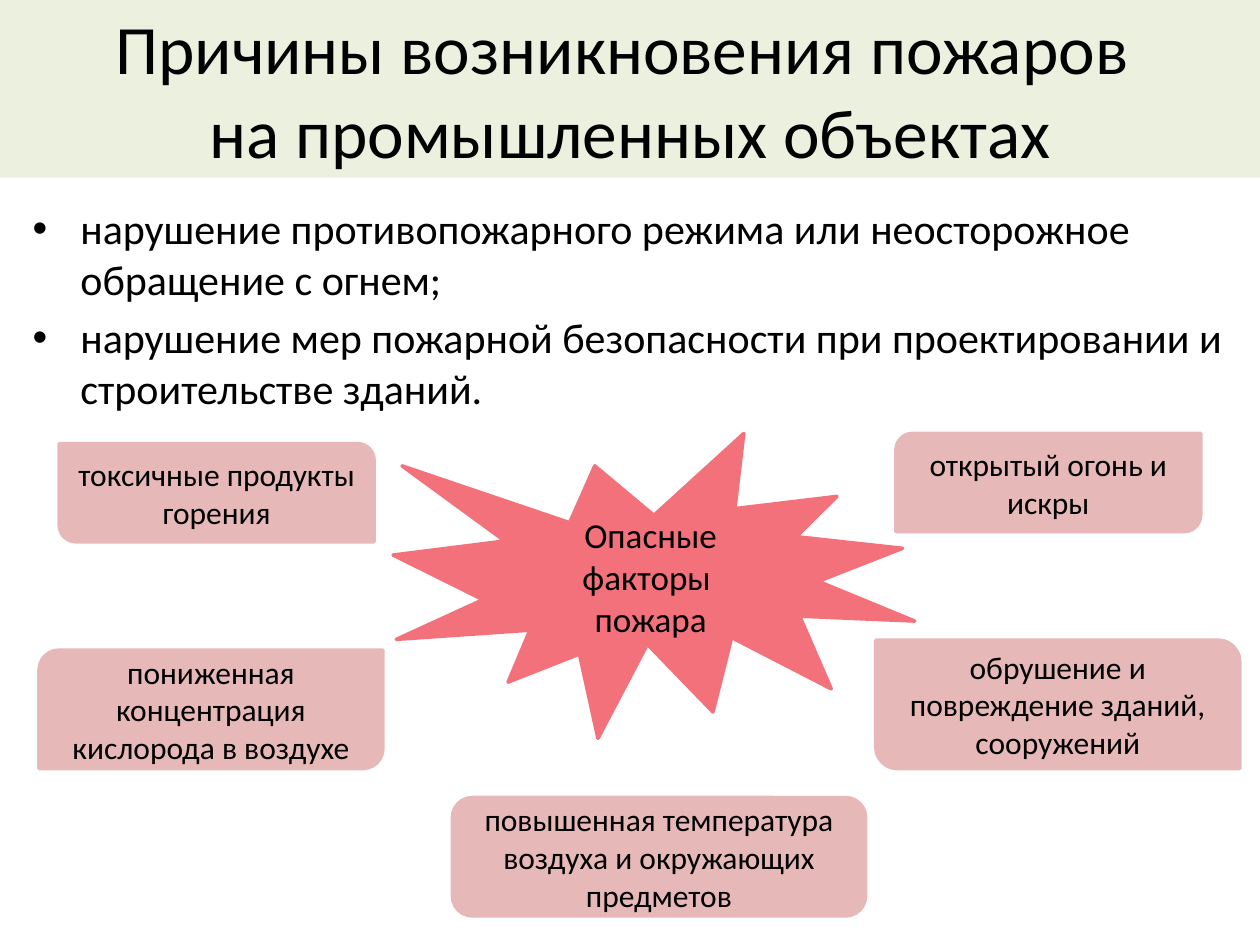
import pptx
import pptx.dml.color
import pptx.enum.shapes
import pptx.enum.text
import pptx.oxml
import pptx.oxml.ns
import pptx.util
from pptx.util import Inches

FONT = "Calibri"
COLORS = {
    "text": "000000",
    "title_band": "EBF1DE",
    "hazard": "F3717A",
    "factor": "E6B9B8",
}
SHAPES = pptx.enum.shapes.MSO_SHAPE
CORNER = 0.17  # rounding as a share of the shorter side

TITLE = "Причины возникновения пожаров \vна промышленных объектах"
CAUSES = [
    "нарушение противопожарного режима или неосторожное обращение с огнем;",
    "нарушение мер пожарной безопасности при проектировании и строительстве зданий.",
]
# Text, box, preset, corner adjustments
FALLING = (SHAPES.ROUND_2_DIAG_RECTANGLE, (CORNER, 0))
RISING = (SHAPES.ROUND_2_DIAG_RECTANGLE, (0, CORNER))
ROUNDED = (SHAPES.ROUNDED_RECTANGLE, (CORNER,))
FACTORS = [
    ("открытый огонь и искры", (7.11, 3.44, 2.42, 0.78), FALLING),
    ("токсичные продукты горения", (0.47, 3.52, 2.5, 0.78), RISING),
    ("пониженная концентрация кислорода в воздухе", (0.31, 5.16, 2.73, 0.94), FALLING),
    ("повышенная температура воздуха и окружающих предметов", (3.59, 6.33, 3.28, 0.94), ROUNDED),
    ("обрушение и повреждение зданий, сооружений", (6.95, 5.08, 2.89, 1.02), RISING),
]


def color(name):
    return pptx.dml.color.RGBColor.from_string(COLORS[name])


def lengths(box):
    return [Inches(value) for value in box]


def format_text(text_frame, size, alignment, anchor):
    text_frame.word_wrap = True
    text_frame.auto_size = pptx.enum.text.MSO_AUTO_SIZE.NONE
    text_frame.vertical_anchor = anchor
    for paragraph in text_frame.paragraphs:
        paragraph.alignment = alignment
        for run in paragraph.runs:
            run.font.name = FONT
            run.font.size = pptx.util.Pt(size)
            run.font.color.rgb = color("text")


def format_centered(text_frame, size):
    format_text(text_frame, size, pptx.enum.text.PP_ALIGN.CENTER,
                pptx.enum.text.MSO_ANCHOR.MIDDLE)


def set_title(slide):
    title = slide.shapes.title
    title.left, title.top, title.width, title.height = lengths((0, 0, 10, 1.41))
    title.fill.solid()
    title.fill.fore_color.rgb = color("title_band")
    title.text_frame.text = TITLE
    format_centered(title.text_frame, 39.6)


def add_bullets(slide, items, box, size):
    text_frame = slide.shapes.add_textbox(*lengths(box)).text_frame
    text_frame.text = "\n".join(items)
    format_text(text_frame, size, pptx.enum.text.PP_ALIGN.LEFT,
                pptx.enum.text.MSO_ANCHOR.TOP)
    indent = Inches(0.38)
    for paragraph in text_frame.paragraphs:
        paragraph.space_before = pptx.util.Pt(0.2 * size)
        properties = paragraph._p.get_or_add_pPr()
        properties.set("marL", str(indent))
        properties.set("indent", str(-indent))
        namespace = pptx.oxml.ns.nsdecls("a")
        for tag in ('buFont %s typeface="Arial"', 'buChar %s char="•"'):
            properties.append(pptx.oxml.parse_xml("<a:" + tag % namespace + "/>"))


def add_filled_shape(slide, preset, box, fill, text, size, adjustments=()):
    shape = slide.shapes.add_shape(preset, *lengths(box))
    shape.shadow.inherit = False
    for index, value in enumerate(adjustments):
        shape.adjustments[index] = value
    shape.fill.solid()
    shape.fill.fore_color.rgb = color(fill)
    shape.line.color.rgb = color(fill)
    shape.line.width = pptx.util.Pt(2)
    shape.text_frame.text = text
    format_centered(shape.text_frame, size)


def main():
    presentation = pptx.Presentation()
    presentation.slide_width = Inches(10)
    presentation.slide_height = Inches(7.5)
    slide = presentation.slides.add_slide(presentation.slide_layouts[5])

    # Title and causes
    set_title(slide)
    add_bullets(slide, CAUSES, (0.16, 1.56, 9.69, 1.95), 24)

    # Central burst
    add_filled_shape(slide, SHAPES.EXPLOSION1, (3.12, 3.44, 4.14, 2.42),
                     "hazard", "Опасные факторы \nпожара", 20)

    # Hazard factors around it
    for text, box, (preset, adjustments) in FACTORS:
        add_filled_shape(slide, preset, box, "factor", text, 18, adjustments)

    presentation.save("out.pptx")


if __name__ == "__main__":
    main()
